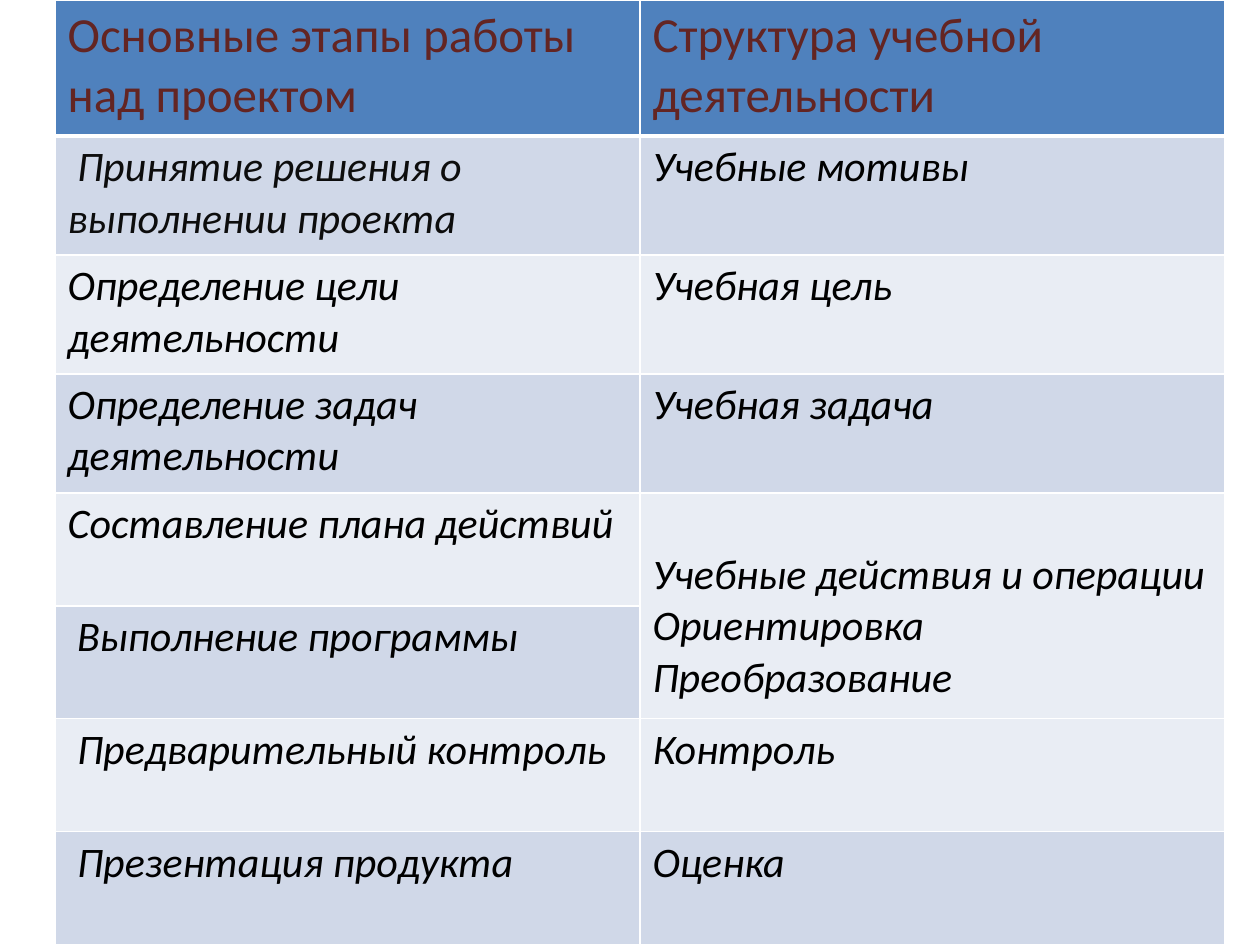
"""Build a slide with a table matching project stages to learning activity."""
from dataclasses import dataclass

from lxml import etree
from pptx import Presentation
from pptx.dml.color import RGBColor
from pptx.oxml.ns import qn
from pptx.util import Emu, Pt

PIXELS_PER_INCH = 126
FONT = "Calibri"
WHITE = RGBColor(0xFF, 0xFF, 0xFF)
BLACK = RGBColor(0x00, 0x00, 0x00)
NEAR_BLACK = RGBColor(0x0D, 0x0D, 0x0D)
MAROON = RGBColor(0x63, 0x25, 0x23)
HEADER_BLUE = RGBColor(0x4F, 0x81, 0xBD)
BAND_DARK = RGBColor(0xD0, 0xD8, 0xE8)
BAND_LIGHT = RGBColor(0xE9, 0xED, 0xF4)

SLIDE_WIDTH, SLIDE_HEIGHT = 1260, 945
TABLE_LEFT, COLUMN_WIDTH = 55, 585
CELL_MARGIN = 6
MERGED_MARGIN = 57
THIN, THICK = 1, 3


@dataclass(frozen=True)
class Stage:
    height: int
    project: str
    activity: str
    color: RGBColor = BLACK
    activity_margin: int = CELL_MARGIN


HEADER = Stage(136, "Основные этапы работы над проектом", "Структура учебной деятельности", MAROON)
STAGES = [
    Stage(119, " Принятие решения о выполнении проекта", "Учебные мотивы", NEAR_BLACK),
    Stage(119, "Определение цели деятельности", "Учебная цель"),
    Stage(119, "Определение задач деятельности", "Учебная задача"),
    Stage(113, "Составление плана действий",
          "Учебные действия и операции\nОриентировка\nПреобразование",
          activity_margin=MERGED_MARGIN),
    Stage(113, " Выполнение программы", ""),
    Stage(113, " Предварительный контроль", "Контроль"),
    Stage(113, " Презентация продукта", "Оценка"),
]
MERGED_ROWS = (4, 5)


def px(length: int) -> Emu:
    """Convert pixels to EMU."""
    return Emu(round(length * 914400 / PIXELS_PER_INCH))


def write_text(text_frame, text: str, *, size: int, color: RGBColor, italic: bool) -> None:
    """Write one paragraph for each line of text."""
    for index, line in enumerate(text.split("\n")):
        paragraph = text_frame.paragraphs[0] if index == 0 else text_frame.add_paragraph()
        run = paragraph.add_run()
        run.text = line
        run.font.name = FONT
        run.font.size = Pt(size)
        run.font.bold = False
        run.font.italic = italic
        run.font.color.rgb = color


def add_borders(cell, top: int, bottom: int) -> None:
    """Draw white borders around a cell."""
    properties = cell._tc.get_or_add_tcPr()
    for side, width in (("L", THIN), ("R", THIN), ("T", top), ("B", bottom)):
        line = etree.SubElement(properties, qn(f"a:ln{side}"), w=str(Pt(width)))
        fill = etree.SubElement(line, qn("a:solidFill"))
        etree.SubElement(fill, qn("a:srgbClr"), val=str(WHITE))


def fill_row(table, row: int, stage: Stage) -> None:
    """Format and fill both cells of a row."""
    is_header = row == 0
    table.rows[row].height = px(stage.height)
    background = HEADER_BLUE if is_header else (BAND_DARK if row % 2 else BAND_LIGHT)
    contents = (
        (stage.project, stage.color, CELL_MARGIN),
        (stage.activity, MAROON if is_header else BLACK, stage.activity_margin),
    )
    for column, (text, color, margin) in enumerate(contents):
        cell = table.cell(row, column)
        add_borders(cell, THICK if row == 1 else THIN, THICK if is_header else THIN)
        cell.fill.solid()
        cell.fill.fore_color.rgb = background
        cell.margin_top = px(margin)
        cell.margin_bottom = px(CELL_MARGIN)
        if text:
            write_text(cell.text_frame, text, size=28 if is_header else 24,
                       color=color, italic=not is_header)


def main() -> None:
    """Create and save the presentation."""
    presentation = Presentation()
    presentation.slide_width = px(SLIDE_WIDTH)
    presentation.slide_height = px(SLIDE_HEIGHT)
    slide = presentation.slides.add_slide(presentation.slide_layouts[6])
    rows = [HEADER, *STAGES]
    table = slide.shapes.add_table(
        len(rows), 2, px(TABLE_LEFT), px(0), px(2 * COLUMN_WIDTH), px(SLIDE_HEIGHT)
    ).table
    for column in table.columns:
        column.width = px(COLUMN_WIDTH)
    for row, stage in enumerate(rows):
        fill_row(table, row, stage)
    first, last = MERGED_ROWS
    table.cell(first, 1).merge(table.cell(last, 1))
    presentation.save("out.pptx")


if __name__ == "__main__":
    main()
